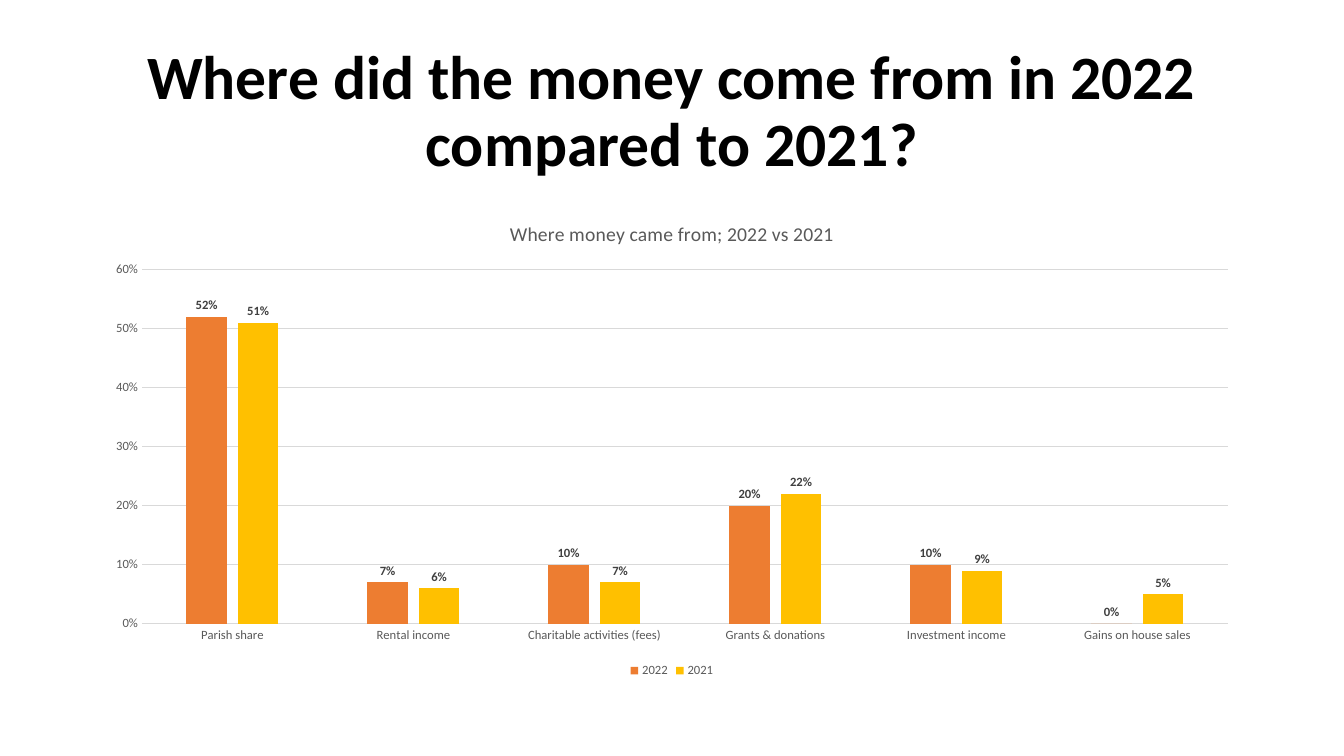
from pptx import Presentation
from pptx import util as u
from pptx.chart.data import CategoryChartData
from pptx.dml.color import RGBColor
from pptx.enum import chart as ch, text

# Content
TITLE = "Where did the money come from in 2022 compared to 2021?"
HEAD = "Where money came from; 2022 vs 2021"
CATS = ["Parish share", "Rental income", "Charitable activities (fees)",
        "Grants & donations", "Investment income", "Gains on house sales"]
ORANGE = RGBColor(0xED, 0x7D, 0x31)
GOLD = RGBColor(0xFF, 0xC0, 0x00)
SERIES = [("2022", ORANGE, (0.52, 0.07, 0.10, 0.20, 0.10, 0)),
          ("2021", GOLD, (0.51, 0.06, 0.07, 0.22, 0.09, 0.05))]

BLACK = RGBColor(0, 0, 0)
DARK = RGBColor(0x40, 0x40, 0x40)
GREY = RGBColor(0x59, 0x59, 0x59)
RULE = RGBColor(0xD9, 0xD9, 0xD9)
FACE = "Calibri"

# Layout in px
WIDE, HIGH = 1344, 756
LEFT = 93
SPAN = WIDE - 2 * LEFT
TITLE_BOX = (LEFT, 40, SPAN, 146)
CHART_BOX = (LEFT, 202, SPAN, 480)


def px(n):
    return u.Emu(round(n * 12192000 / WIDE))


def style(font, size, color, bold=False):
    font.name, font.size, font.bold = FACE, u.Pt(size), bold
    font.color.rgb = color


def rule(line):
    line.color.rgb = RULE
    line.width = u.Pt(0.75)


deck = Presentation()
deck.slide_width, deck.slide_height = px(WIDE), px(HIGH)
slide = deck.slides.add_slide(deck.slide_layouts[5])

# Title
title = slide.shapes.title
title.left, title.top, title.width, title.height = map(px, TITLE_BOX)
frame = title.text_frame
frame.text = TITLE
frame.word_wrap = True
frame.auto_size = text.MSO_AUTO_SIZE.NONE
frame.vertical_anchor = text.MSO_ANCHOR.MIDDLE
para = frame.paragraphs[0]
para.alignment = text.PP_ALIGN.CENTER
para.line_spacing = 0.9
style(para.runs[0].font, 44, BLACK, True)

# Chart
data = CategoryChartData(number_format="0%")
data.categories = CATS
for name, _, vals in SERIES:
    data.add_series(name, vals)
chart = slide.shapes.add_chart(
    ch.XL_CHART_TYPE.COLUMN_CLUSTERED, *map(px, CHART_BOX), data).chart
style(chart.font, 10, BLACK)
chart.has_title = True
head = chart.chart_title
head.include_in_layout = False
head.text_frame.text = HEAD
style(head.text_frame.paragraphs[0].runs[0].font, 14, GREY)

# Legend
chart.has_legend = True
chart.legend.position = ch.XL_LEGEND_POSITION.BOTTOM
chart.legend.include_in_layout = False
style(chart.legend.font, 9, GREY)

# Axes
cat, val = chart.category_axis, chart.value_axis
for axis in (cat, val):
    axis.major_tick_mark = axis.minor_tick_mark = ch.XL_TICK_MARK.NONE
    style(axis.tick_labels.font, 9, GREY)
rule(cat.format.line)
val.format.line.fill.background()
val.has_major_gridlines = True
rule(val.major_gridlines.format.line)
val.minimum_scale, val.maximum_scale, val.major_unit = 0, 0.6, 0.1
val.tick_labels.number_format = "0%"
val.tick_labels.number_format_is_linked = False

# Columns and their labels
plot = chart.plots[0]
plot.vary_by_categories = False
plot.gap_width, plot.overlap = 219, -27
for bars, (_, color, _) in zip(plot.series, SERIES):
    bars.format.fill.solid()
    bars.format.fill.fore_color.rgb = color
    bars.invert_if_negative = False
    tags = bars.data_labels
    tags.show_value = True
    tags.position = ch.XL_LABEL_POSITION.OUTSIDE_END
    tags.number_format = "0%"
    tags.number_format_is_linked = False
    style(tags.font, 9, DARK, True)

deck.save("out.pptx")
